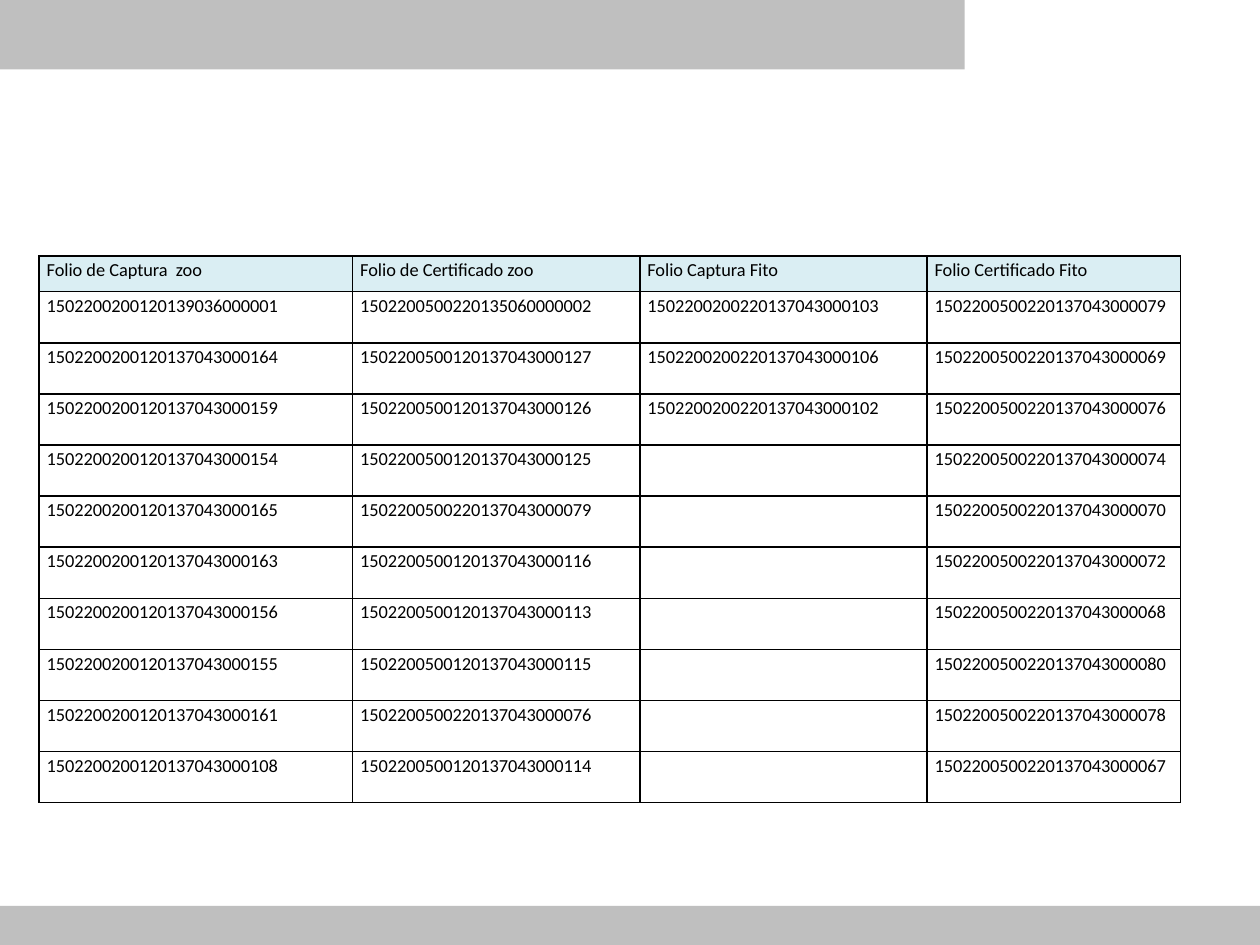
from dataclasses import dataclass

from lxml import etree
from pptx import Presentation
from pptx import util as u
from pptx.dml.color import RGBColor
from pptx.enum import shapes
from pptx.oxml import ns


@dataclass(frozen=True)
class Theme:
    """Colours and type of the slide."""
    font: str = "Calibri"
    size: float = 10.5
    ink: str = "000000"
    band: str = "BFBFBF"
    header: str = "DAEEF3"
    border: float = 1


class SlideBuilder:
    """Draws styled elements on the current slide."""

    def __init__(self, slide, theme):
        self.slide = slide
        self.theme = theme

    def band(self, left, top, width, height):
        """Add a plain rectangular band."""
        shape = self.slide.shapes.add_shape(
            shapes.MSO_SHAPE.RECTANGLE, *map(u.Cm, (left, top, width, height)))
        shape.shadow.inherit = False
        shape.fill.solid()
        shape.fill.fore_color.rgb = RGBColor.from_string(self.theme.band)
        shape.line.fill.background()

    def table(self, left, top, widths, heights, rows):
        """Add a bordered table whose first row is the header."""
        table = self.slide.shapes.add_table(
            len(rows), len(widths), u.Cm(left), u.Cm(top),
            u.Cm(sum(widths)), u.Cm(sum(heights))).table
        table.first_row = table.horz_banding = False
        for column, width in zip(table.columns, widths):
            column.width = u.Cm(width)
        for row, height in zip(table.rows, heights):
            row.height = u.Cm(height)
        for row_index, values in enumerate(rows):
            for column_index, value in enumerate(values):
                self.cell(table.cell(row_index, column_index), value, row_index == 0)

    def cell(self, cell, value, is_header):
        """Fill, border and write one table cell."""
        cell.margin_left = cell.margin_right = u.Cm(0.15)
        cell.margin_top = cell.margin_bottom = 0
        self.borders(cell)
        if is_header:
            cell.fill.solid()
            cell.fill.fore_color.rgb = RGBColor.from_string(self.theme.header)
        else:
            cell.fill.background()
        paragraph = cell.text_frame.paragraphs[0]
        paragraph.text = value
        paragraph.line_spacing = 1.15
        paragraph.font.name = self.theme.font
        paragraph.font.size = u.Pt(self.theme.size)
        paragraph.font.color.rgb = RGBColor.from_string(self.theme.ink)

    def borders(self, cell):
        """Draw a solid line on all four sides of a cell."""
        properties = cell._tc.get_or_add_tcPr()
        for side in ("a:lnL", "a:lnR", "a:lnT", "a:lnB"):
            line = etree.SubElement(
                properties, ns.qn(side), w=str(u.Pt(self.theme.border)))
            fill = etree.SubElement(line, ns.qn("a:solidFill"))
            etree.SubElement(fill, ns.qn("a:srgbClr"), val=self.theme.ink)


ROWS = [
    ("Folio de Captura  zoo", "Folio de Certificado zoo",
     "Folio Captura Fito", "Folio Certificado Fito"),
    ("1502200200120139036000001", "1502200500220135060000002",
     "1502200200220137043000103", "1502200500220137043000079"),
    ("1502200200120137043000164", "1502200500120137043000127",
     "1502200200220137043000106", "1502200500220137043000069"),
    ("1502200200120137043000159", "1502200500120137043000126",
     "1502200200220137043000102", "1502200500220137043000076"),
    ("1502200200120137043000154", "1502200500120137043000125",
     "", "1502200500220137043000074"),
    ("1502200200120137043000165", "1502200500220137043000079",
     "", "1502200500220137043000070"),
    ("1502200200120137043000163", "1502200500120137043000116",
     "", "1502200500220137043000072"),
    ("1502200200120137043000156", "1502200500120137043000113",
     "", "1502200500220137043000068"),
    ("1502200200120137043000155", "1502200500120137043000115",
     "", "1502200500220137043000080"),
    ("1502200200120137043000161", "1502200500220137043000076",
     "", "1502200500220137043000078"),
    ("1502200200120137043000108", "1502200500120137043000114",
     "", "1502200500220137043000067"),
]


def main():
    """Build and save the presentation."""
    presentation = Presentation()
    presentation.slide_width = u.Cm(25.4)
    presentation.slide_height = u.Cm(19.05)
    slide = presentation.slides.add_slide(presentation.slide_layouts[6])
    builder = SlideBuilder(slide, Theme())
    builder.band(0, 0, 19.45, 1.4)
    builder.band(0, 18.26, 25.4, 0.79)
    builder.table(0.79, 5.16, (6.32, 5.79, 5.79, 5.11),
                  [0.72] + [1.03] * (len(ROWS) - 1), ROWS)
    presentation.save("out.pptx")


if __name__ == "__main__":
    main()
